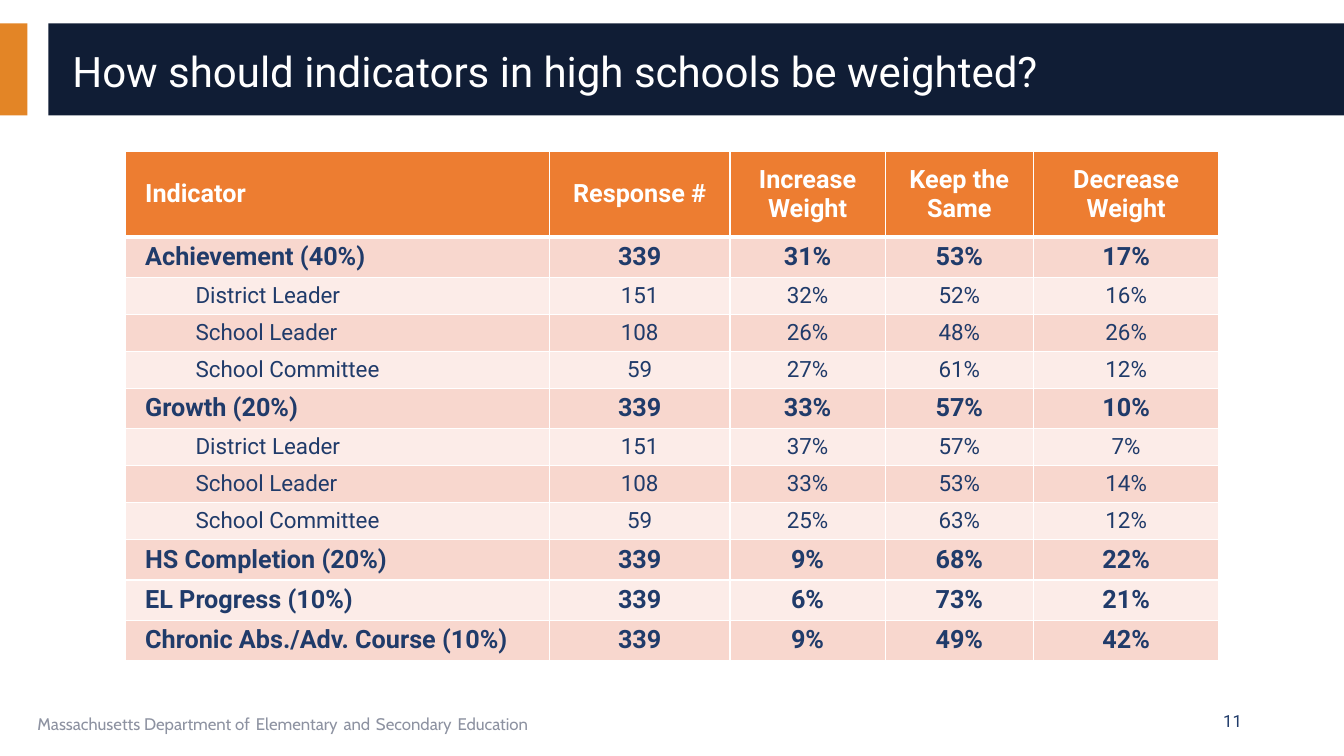
from dataclasses import dataclass
from pptx import Presentation
from pptx.dml.color import RGBColor as Color
from pptx.enum.shapes import MSO_SHAPE as Shape
from pptx.enum.text import MSO_ANCHOR as Anchor, PP_ALIGN as Align
from pptx.oxml import parse_xml as to_xml
from pptx.oxml.ns import nsdecls
from pptx.util import Inches, Pt


@dataclass(frozen=True)
class Theme:
    navy: str = "101D35"
    amber: str = "E38526"
    head: str = "ED7D31"
    dark: str = "F8D7CE"
    light: str = "FCECE8"
    ink: str = "203B6A"
    gray: str = "8D92A1"
    white: str = "FFFFFF"
    font: str = "Roboto"
    foot: str = "Cabin"
    title: int = 30
    main: int = 18
    sub: int = 16
    small: int = 12


T = Theme()
WIDE, HIGH = Inches(13.33), Inches(7.5)
COLS = [4.21, 1.79, 1.54, 1.47, 1.84]
TALL, MAIN, SUB = 0.85, 0.4, 0.36
HEADS = ["Indicator", "Response #", "Increase\nWeight", "Keep the Same", "Decrease Weight"]
ROWS = [
    (0, "Achievement (40%)", 339, 31, 53, 17),
    (1, "District Leader", 151, 32, 52, 16),
    (1, "School Leader", 108, 26, 48, 26),
    (1, "School Committee", 59, 27, 61, 12),
    (0, "Growth (20%)", 339, 33, 57, 10),
    (1, "District Leader", 151, 37, 57, 7),
    (1, "School Leader", 108, 33, 53, 14),
    (1, "School Committee", 59, 25, 63, 12),
    (0, "HS Completion (20%)", 339, 9, 68, 22),
    (0, "EL Progress (10%)", 339, 6, 73, 21),
    (0, "Chronic Abs./Adv. Course (10%)", 339, 9, 49, 42),
]


def share(x, y, w, h):
    return [int(part * size / 100) for part, size in zip((x, y, w, h), (WIDE, HIGH, WIDE, HIGH))]


def inner(box, x, y, w, h):
    left, top, wide, high = box
    return (left + x * wide / 100, top + y * high / 100, w * wide / 100, h * high / 100)


def style(item, look):
    for name, value in look.items():
        setattr(item, name, value)


def write(para, text, size, color, font=T.font, bold=False):
    run = para.add_run()
    run.text = text
    style(run.font, {"name": font, "size": Pt(size), "bold": bold})
    run.font.color.rgb = Color.from_string(color)


def label(slide, box, anchor=Anchor.MIDDLE, align=Align.LEFT):
    frame = slide.shapes.add_textbox(*share(*box)).text_frame
    style(frame, {"word_wrap": True, "vertical_anchor": anchor})
    para = frame.paragraphs[0]
    para.alignment = align
    return para


def block(slide, box, color):
    rect = slide.shapes.add_shape(Shape.RECTANGLE, *share(*box))
    rect.shadow.inherit = False
    rect.fill.solid()
    rect.fill.fore_color.rgb = Color.from_string(color)
    rect.line.fill.background()


def banner(slide, box):
    block(slide, inner(box, 0, 0, 2.05, 100), T.amber)
    block(slide, inner(box, 3.6, 0, 96.4, 100), T.navy)
    para = label(slide, inner(box, 4.65, 10, 93.3, 90))
    para.line_spacing = 0.9
    write(para, "How should indicators in high schools be weighted?", T.title, T.white)


def border(cell, row):
    props = cell._tc.get_or_add_tcPr()
    sides = {"L": 1, "R": 1, "T": 3 if row == 1 else 1, "B": 1 if row else 3}
    for spot, (side, width) in enumerate(sides.items()):
        props.insert(spot, to_xml(
            f'<a:ln{side} {nsdecls("a")} w="{Pt(width)}"><a:solidFill>'
            f'<a:srgbClr val="{T.white}"/></a:solidFill></a:ln{side}>'))


def fill_cell(cell, row, col, text, sub):
    cell.fill.solid()
    tint = (T.dark if row % 2 else T.light) if row else T.head
    cell.fill.fore_color.rgb = Color.from_string(tint)
    style(cell, {
        "margin_left": Inches(0.2), "margin_right": Inches(0.2),
        "margin_top": Inches(0.05), "margin_bottom": Inches(0.05),
        "vertical_anchor": Anchor.TOP if row else Anchor.MIDDLE,
    })
    border(cell, row)
    frame = cell.text_frame
    for spot, line in enumerate(text.split("\n")):
        para = frame.add_paragraph() if spot else frame.paragraphs[0]
        para.alignment = Align.CENTER if col else Align.LEFT
        if sub and not col:
            para.level = 1
            props = para._p.get_or_add_pPr()
            props.set("marL", str(Inches(0.5)))
            props.set("indent", "0")
        write(para, line, T.sub if sub else T.main, T.ink if row else T.white, bold=not sub)


def survey(slide, box):
    left, top, wide, high = share(*box)
    grid = slide.shapes.add_table(len(ROWS) + 1, len(COLS), left, top, wide, high).table
    for col, part in zip(grid.columns, COLS):
        col.width = int(wide * part / sum(COLS))
    tall = [TALL] + [SUB if row[0] else MAIN for row in ROWS]
    for row, part in zip(grid.rows, tall):
        row.height = int(high * part / sum(tall))
    lines = [(0, HEADS)] + [
        (sub, [name, str(count)] + [f"{rate}%" for rate in rates])
        for sub, name, count, *rates in ROWS]
    for row, (sub, texts) in enumerate(lines):
        for col, text in enumerate(texts):
            fill_cell(grid.cell(row, col), row, col, text, sub)


def footer(slide, box):
    para = label(slide, inner(box, 2.05, 0, 63.3, 100), Anchor.TOP)
    words = ["Massachusetts Department of", "Elementary", "and", "Secondary", "Education"]
    for spot, word in enumerate(words):
        if spot:
            write(para, " ", T.main, T.ink, T.foot)
        write(para, word, T.small, T.gray, T.foot)
    para = label(slide, inner(box, 70.65, 0, 22.5, 100), align=Align.RIGHT)
    write(para, "11", T.small, T.ink)


def main():
    deck = Presentation()
    style(deck, {"slide_width": WIDE, "slide_height": HIGH})
    slide = deck.slides.add_slide(deck.slide_layouts[6])
    banner(slide, (0, 3.1, 100, 12.15))
    survey(slide, (9.3, 20.05, 81.4, 66.6))
    footer(slide, (0, 92.65, 100, 5.35))
    deck.save("out.pptx")


if __name__ == "__main__":
    main()
